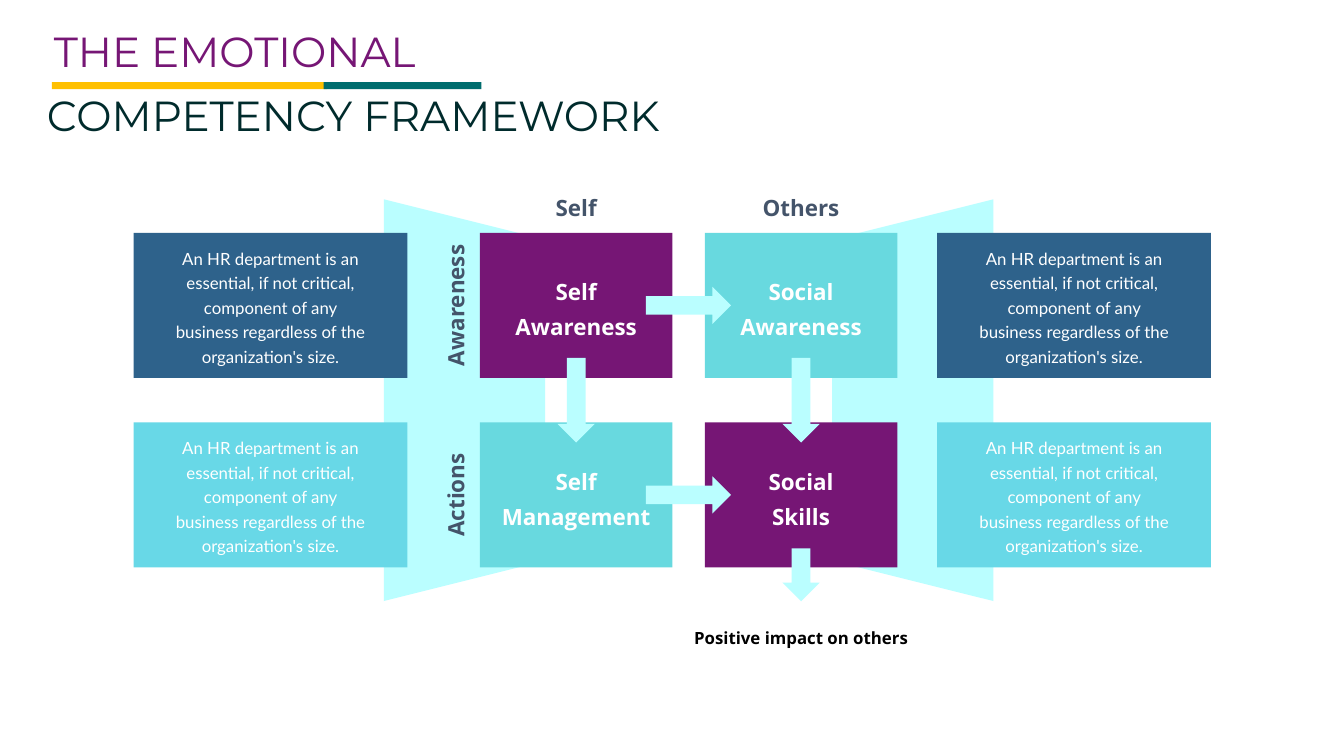
from pptx import Presentation
from pptx.dml.color import RGBColor
from pptx.enum.shapes import MSO_SHAPE as SHAPE
from pptx.enum.text import MSO_ANCHOR as ANCHOR, MSO_AUTO_SIZE as AUTO, PP_ALIGN as ALIGN
from pptx.util import Inches, Pt

COLORS = {"purple": "761675", "aqua": "68D9DF", "sky": "68D8E7", "ice": "BAFEFF",
          "blue": "2E628B", "slate": "44546A", "gold": "FFC000", "teal": "006D6E",
          "ink": "002B2C", "white": "FFFFFF", "black": "000000"}

TITLES = [("THE EMOTIONAL", 0.97, 0.46, 7.76, "purple"),
          ("COMPETENCY FRAMEWORK", 0.83, 1.72, 13.02, "ink")]
RULES = [(1.03, 5.46, "gold"), (6.42, 3.13, "teal")]
COLUMNS = [("Self", 1.02), ("Others", 1.74)]
ROWS = [("Awareness", 2.63), ("Actions", 1.87)]
QUADRANTS = [[("Self", "Awareness", "purple"), ("Social", "Awareness", "aqua")],
             [("Self", "Management", "aqua"), ("Social", "Skills", "purple")]]
NOTE = ("An HR department is an essential, if not critical, component of any "
        "business regardless of the organization's size.")
NOTE_COLORS = ["blue", "sky"]
RESULT = "Positive impact on others"

STYLES = {
    "title": {"name": "Montserrat", "size": Pt(60)},
    "label": {"name": "Open Sans", "size": Pt(32), "bold": True},
    "result": {"name": "Open Sans", "size": Pt(24), "bold": True},
    "note": {"name": "Lato", "size": Pt(24)},
}
SPACING = {"label": Pt(50), "result": Pt(35), "note": Pt(35)}

COL_X, ROW_Y, CARD_W, CARD_H = [9.52, 13.98], [4.62, 8.38], 3.82, 2.88
NOTE_X, NOTE_W, NOTE_PAD = [2.65, 18.59], 5.43, 0.68
ARROW = 0.74


def add_block(s, kind, x, y, w, h, color, rotation=0):
    sp = s.shapes.add_shape(kind, Inches(x), Inches(y), Inches(w), Inches(h))
    sp.shadow.inherit = False
    sp.fill.solid()
    sp.fill.fore_color.rgb = RGBColor.from_string(COLORS[color])
    sp.line.fill.background()
    sp.rotation = rotation


def add_text(s, lines, x, y, w, h, style, color, anchor=ANCHOR.MIDDLE,
             align=ALIGN.CENTER, wrap=False, rotation=0):
    sp = s.shapes.add_textbox(Inches(x), Inches(y), Inches(w), Inches(h))
    sp.rotation = rotation
    tf = sp.text_frame
    frame = {"word_wrap": wrap, "auto_size": AUTO.SHAPE_TO_FIT_TEXT, "vertical_anchor": anchor}
    for key, value in frame.items():
        setattr(tf, key, value)
    for i, line in enumerate(lines):
        p = tf.add_paragraph() if i else tf.paragraphs[0]
        p.alignment = align
        p.line_spacing = SPACING.get(style)
        r = p.add_run()
        r.text = line
        for key, value in STYLES[style].items():
            setattr(r.font, key, value)
        r.font.color.rgb = RGBColor.from_string(COLORS[color])


def add_matrix(s):
    for x, rotation in [(14.12, 270), (5.23, 90)]:
        add_block(s, SHAPE.TRAPEZOID, x, 6.34, 7.97, 3.2, "ice", rotation)
    centers = [x + CARD_W / 2 for x in COL_X]
    middles = [y + CARD_H / 2 for y in ROW_Y]
    for y, cy, row in zip(ROW_Y, middles, QUADRANTS):
        for x, cx, (first, second, color) in zip(COL_X, centers, row):
            add_block(s, SHAPE.RECTANGLE, x, y, CARD_W, CARD_H, color)
            add_text(s, [first, second], cx - 1.6, cy - 0.72, 3.2, 1.44, "label", "white")
    for cx, (name, w) in zip(centers, COLUMNS):
        add_text(s, [name], cx - w / 2, 3.7, w, 0.74, "label", "slate", ANCHOR.BOTTOM)
    for cy, (name, w) in zip(middles, ROWS):
        add_text(s, [name], 8.98 - w / 2, cy - 0.37, w, 0.74, "label", "slate",
                 ANCHOR.BOTTOM, rotation=270)
    for cx in centers:
        add_block(s, SHAPE.DOWN_ARROW, cx - ARROW / 2, 7.1, ARROW, 1.68, "ice")
    for cy in middles:
        add_block(s, SHAPE.RIGHT_ARROW, 12.81, cy - ARROW / 2, 1.69, ARROW, "ice")
    add_block(s, SHAPE.DOWN_ARROW, centers[1] - ARROW / 2, 10.88, ARROW, 1.05, "ice")
    add_text(s, [RESULT], centers[1] - 2.25, 12.32, 4.5, 0.56, "result", "black", ANCHOR.TOP)


def add_notes(s):
    for x in NOTE_X:
        for y, color in zip(ROW_Y, NOTE_COLORS):
            add_block(s, SHAPE.RECTANGLE, x, y, NOTE_W, CARD_H, color)
            add_text(s, [NOTE], x + NOTE_PAD, y + 0.19, NOTE_W - 2 * NOTE_PAD, 2.5,
                     "note", "white", wrap=True)


def add_title(s):
    for text, x, y, w, color in TITLES:
        add_text(s, [text], x, y, w, 1.11, "title", color, ANCHOR.TOP, ALIGN.LEFT)
    for x, w, color in RULES:
        add_block(s, SHAPE.RECTANGLE, x, 1.63, w, 0.14, color)


def main():
    """Build the emotional competency framework slide."""
    prs = Presentation()
    prs.slide_width, prs.slide_height = Inches(26.66), Inches(15)
    s = prs.slides.add_slide(prs.slide_layouts[6])
    add_matrix(s)
    add_notes(s)
    add_title(s)
    prs.save("out.pptx")


if __name__ == "__main__":
    main()
